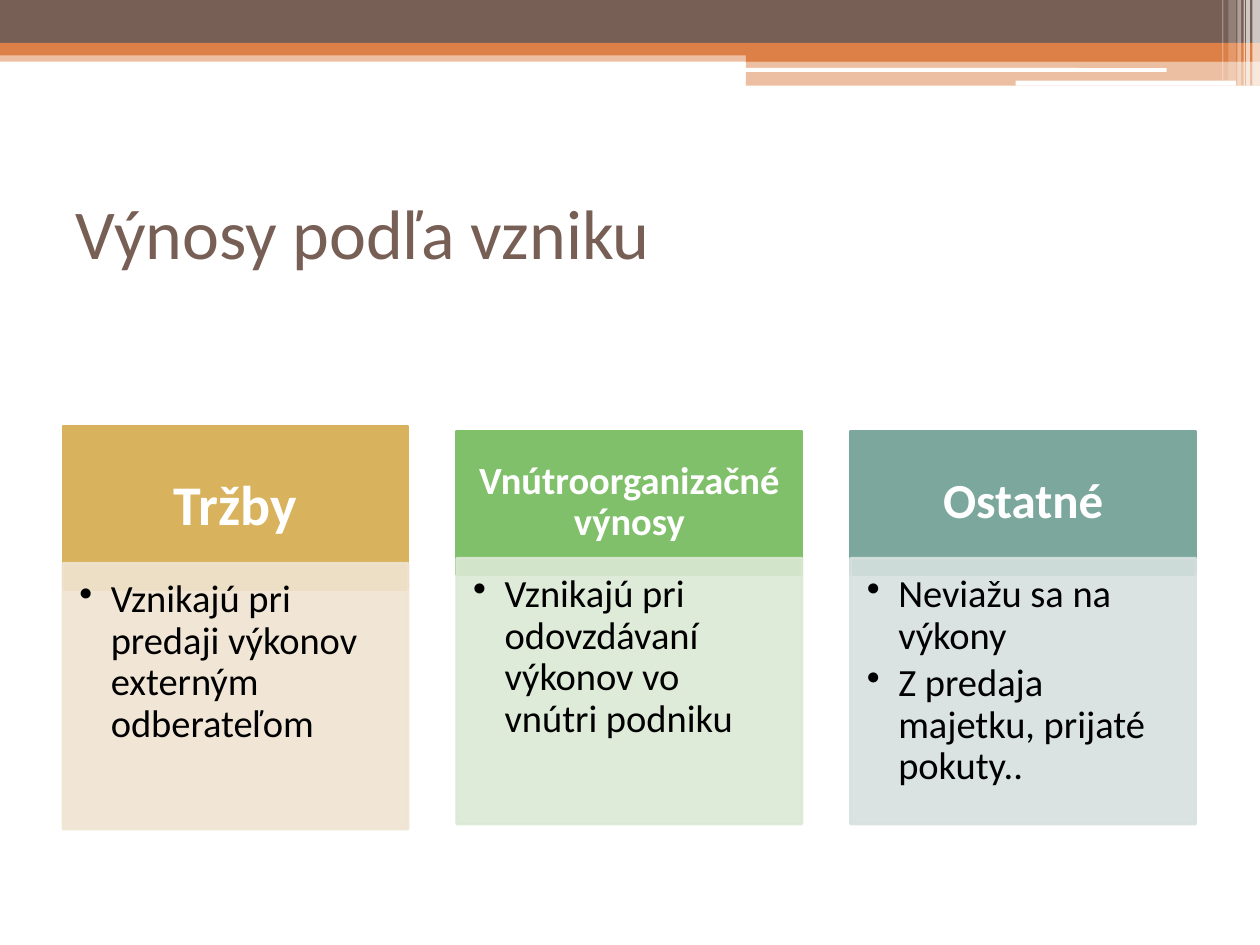
from lxml import etree
from pptx import Presentation
from pptx.dml.color import RGBColor
from pptx.enum.shapes import MSO_SHAPE
from pptx.enum.text import MSO_ANCHOR, PP_ALIGN
from pptx.oxml.ns import qn
from pptx.util import Inches, Pt

RECT, ROUND = MSO_SHAPE.RECTANGLE, MSO_SHAPE.ROUNDED_RECTANGLE
TOP, MIDDLE = MSO_ANCHOR.TOP, MSO_ANCHOR.MIDDLE
LEFT, CENTER = PP_ALIGN.LEFT, PP_ALIGN.CENTER
FONT = "Calibri"
HEX = {
    "brown": "775F55", "orange": "DD8047", "white": "FFFFFF", "black": "000000",
    "gold": "D8B25C", "sand": "F0E4D2", "green": "81C06B", "mint": "DBE9D4",
    "teal": "7BA79D", "mist": "D7E1DF",
}

TITLE = "Výnosy podľa vzniku"
# heading, size, side inset, end inset, head colour, body colour, top, head height, points
CARDS = [
    ("Tržby", 32, 0.25, 0.14, "gold", "sand", 3.38, 1.3,
     ["Vznikajú pri predaji výkonov externým odberateľom"]),
    ("Vnútroorganizačné výnosy", 22, 0.17, 0.1, "green", "mint", 3.42, 1.14,
     ["Vznikajú pri odovzdávaní výkonov vo vnútri podniku"]),
    ("Ostatné", 28, 0.22, 0.12, "teal", "mist", 3.42, 1.14,
     ["Neviažu sa na výkony", "Z predaja majetku, prijaté pokuty.."]),
]
# left, top, width, height, colour, opacity, preset
BANDS = [
    (0, 0.4, 10, 0.09, "orange", 50, RECT),
    (0, 0, 10, 0.34, "brown", 100, RECT),
    (0, 0.34, 10, 0.1, "orange", 100, RECT),
    (5.92, 0.39, 4.08, 0.1, "orange", 100, RECT),
    (5.92, 0.48, 4.08, 0.2, "orange", 50, RECT),
    (5.91, 0.54, 3.35, 0.03, "white", 100, ROUND),
    (8.06, 0.64, 1.75, 0.04, "white", 100, ROUND),
]
# left, width, height, opacity
STRIPES = [
    (9.94, 0.06, 0.68, 65), (9.89, 0.03, 0.68, 65), (9.87, 0.01, 0.68, 60),
    (9.82, 0.03, 0.68, 40), (9.75, 0.06, 0.64, 20), (9.7, 0.01, 0.64, 30),
]
MARGIN, PITCH, WIDTH = 0.5, 3.125, 2.74
BODY_HIGH, BODY_END = 2.11, 3.2  # body height; card top to body bottom


def color(name):
    return RGBColor.from_string(HEX[name])


def add_box(slide, left, top, width, height, fill, alpha=100, kind=RECT, edge=False):
    box = slide.shapes.add_shape(kind, *map(Inches, (left, top, width, height)))
    box.shadow.inherit = False
    box.fill.solid()
    box.fill.fore_color.rgb = color(fill)
    if edge:
        box.line.color.rgb = color(fill)
        box.line.width = Pt(1.5)
    else:
        box.line.fill.background()
    if alpha < 100:
        for node in box.element.spPr.iter(qn("a:srgbClr")):
            etree.SubElement(node, qn("a:alpha")).set("val", str(alpha * 1000))
    return box


def style(para, size, tint, bold=False):
    for run in para.runs:
        run.font.name, run.font.size, run.font.bold = FONT, Pt(size), bold
        run.font.color.rgb = color(tint)


def write(box, lines, size, tint, insets, align, anchor, bold=False):
    frame = box.text_frame
    frame.word_wrap = True
    frame.vertical_anchor = anchor
    (frame.margin_left, frame.margin_top,
     frame.margin_right, frame.margin_bottom) = map(Inches, insets)
    frame.text = "\n".join(lines)
    for para in frame.paragraphs:
        para.alignment = align
        para.line_spacing = 0.9
        para.space_after = Pt(3.3)
        style(para, size, tint, bold)
    return frame


def add_bullets(frame):
    for para in frame.paragraphs:
        props = para._p.get_or_add_pPr()
        props.set("marL", str(Inches(0.25)))
        props.set("indent", str(Inches(-0.25)))
        etree.SubElement(props, qn("a:buChar")).set("char", "•")


def main():
    deck = Presentation()
    deck.slide_width, deck.slide_height = Inches(10), Inches(7.5)
    slide = deck.slides.add_slide(deck.slide_layouts[5])

    for band in BANDS:
        add_box(slide, *band)
    for left, width, height, alpha in STRIPES:
        add_box(slide, left, 0, width, height, "white", alpha)

    title = slide.shapes.title
    title.left, title.top, title.width, title.height = map(Inches, (0.5, 1.25, 9, 1.17))
    title.text_frame.text = TITLE
    title.text_frame.vertical_anchor = MIDDLE
    para = title.text_frame.paragraphs[0]
    para.alignment = LEFT
    style(para, 40, "brown")

    for col, (name, size, side, end, dark, pale, top, high, points) in enumerate(CARDS):
        left = MARGIN + col * PITCH
        head = add_box(slide, left, top, WIDTH, high, dark, edge=True)
        write(head, [name], size, "white", (side, end, side, end), CENTER, MIDDLE, True)
        body = add_box(slide, left, top + BODY_END - BODY_HIGH, WIDTH, BODY_HIGH,
                       pale, 90, edge=True)
        if col > 0:
            body.top = Inches(4.43)
        add_bullets(write(body, points, 22, "black", (0.13, 0.13, 0.17, 0.19), LEFT, TOP))

    deck.save("out.pptx")


if __name__ == "__main__":
    main()
